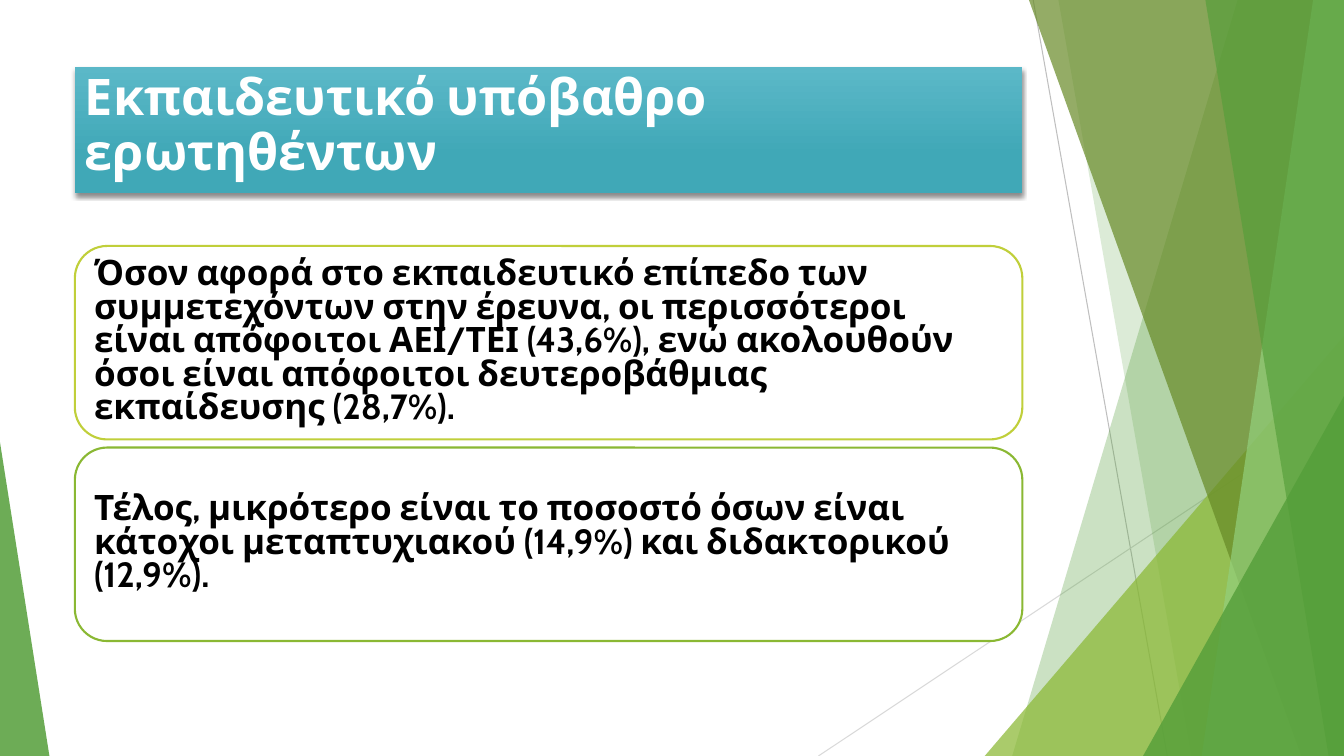
from lxml import etree
from pptx import Presentation
from pptx.dml.color import RGBColor
from pptx.enum.shapes import MSO_CONNECTOR, MSO_SHAPE
from pptx.enum.text import MSO_ANCHOR, MSO_AUTO_SIZE, PP_ALIGN
from pptx.oxml import parse_xml
from pptx.oxml.ns import nsdecls, qn
from pptx.util import Pt

STRAIGHT = MSO_CONNECTOR.STRAIGHT
TRIANGLE = MSO_SHAPE.ISOSCELES_TRIANGLE
ROUNDED = MSO_SHAPE.ROUNDED_RECTANGLE
TOP, MIDDLE = MSO_ANCHOR.TOP, MSO_ANCHOR.MIDDLE
NO_FIT = MSO_AUTO_SIZE.NONE
LEFT = PP_ALIGN.LEFT

W, H = 960, 540
TITLE_ONLY = 5
CONTENT_X, CONTENT_W = 53.5, 676.8
BOX_Y, BOX_H, BOX_STEP = 175.7, 138.2, 144
GREEN, LIME = "549E39", "8AB833"

TITLE = "Εκπαιδευτικό υπόβαθρο ερωτηθέντων"
BOXES = [
    ("Όσον αφορά στο εκπαιδευτικό επίπεδο των συμμετεχόντων στην έρευνα, "
     "οι περισσότεροι είναι απόφοιτοι ΑΕΙ/ΤΕΙ (43,6%), ενώ ακολουθούν όσοι "
     "είναι απόφοιτοι δευτεροβάθμιας εκπαίδευσης (28,7%).", "C0CF3A"),
    ("Τέλος, μικρότερο είναι το ποσοστό όσων είναι κάτοχοι μεταπτυχιακού "
     "(14,9%) και διδακτορικού (12,9%).", LIME),
]


def rgb(color):
    return RGBColor.from_string(color)


def set_all(obj, values):
    for name, value in values.items():
        setattr(obj, name, value)


def add_line(slide, x1, y1, x2, y2, color):
    c = slide.shapes.add_connector(STRAIGHT, Pt(x1), Pt(y1), Pt(x2), Pt(y2))
    c.line.color.rgb = rgb(color)
    c.line.width = Pt(0.75)
    etree.SubElement(c._element.spPr, qn("a:effectLst"))


def paint(sp, color, opacity):
    """Give a facet a see-through fill and no outline."""
    sp.shadow.inherit = False
    sp.fill.solid()
    sp.fill.fore_color.rgb = rgb(color)
    sp.line.fill.background()
    clr = sp._element.spPr.find(qn("a:solidFill"))[0]
    etree.SubElement(clr, qn("a:alpha")).set("val", str(opacity * 1000))


def add_band(slide, top_x, bottom_x, color, opacity):
    """Add a facet that runs from a slanted left edge to the slide's right edge."""
    builder = slide.shapes.build_freeform(Pt(top_x), 0)
    builder.add_line_segments(
        [(Pt(x), Pt(y)) for x, y in ((W, 0), (W, H), (bottom_x, H))])
    paint(builder.convert_to_shape(), color, opacity)


def add_triangle(slide, x, y, w, apex, color, opacity):
    """Add a right-angled facet that stands on the bottom edge."""
    sp = slide.shapes.add_shape(TRIANGLE, Pt(x), Pt(y), Pt(w), Pt(H - y))
    sp.adjustments[0] = apex
    paint(sp, color, opacity)


def write(sp, text, size, color, anchor, spacing, margins):
    tf = sp.text_frame
    set_all(tf, {"word_wrap": True, "auto_size": NO_FIT,
                 "vertical_anchor": anchor, **margins})
    p = tf.paragraphs[0]
    set_all(p, {"alignment": LEFT, "line_spacing": spacing})
    r = p.add_run()
    r.text = text
    set_all(r.font, {"name": "Cabin", "size": Pt(size), "bold": True})
    r.font.color.rgb = rgb(color)


def format_title(slide):
    sp = slide.shapes.title
    set_all(sp, {"left": Pt(CONTENT_X), "top": Pt(48),
                 "width": Pt(CONTENT_W), "height": Pt(90)})
    sp.fill.gradient()
    sp.fill.gradient_angle = 270
    stops = zip(sp.fill.gradient_stops, ("5BB8C8", "40A8B7"), (0, 0.7))
    for stop, color, position in stops:
        stop.color.rgb = rgb(color)
        stop.position = position
    sp._element.spPr.append(parse_xml(
        f'<a:effectLst {nsdecls("a")}><a:outerShdw blurRad="38100" dist="25400" '
        'dir="5400000" rotWithShape="0"><a:srgbClr val="000000">'
        '<a:alpha val="45000"/></a:srgbClr></a:outerShdw></a:effectLst>'))
    write(sp, TITLE, 36, "FFFFFF", TOP, 0.9,
          {"margin_left": Pt(7.2), "margin_right": Pt(7.2),
           "margin_top": Pt(3.6), "margin_bottom": Pt(3.6)})


def add_box(slide, y, text, color):
    sp = slide.shapes.add_shape(
        ROUNDED, Pt(CONTENT_X), Pt(y), Pt(CONTENT_W), Pt(BOX_H))
    sp.shadow.inherit = False
    sp.fill.solid()
    sp.fill.fore_color.rgb = rgb("FFFFFF")
    sp.line.color.rgb = rgb(color)
    sp.line.width = Pt(1.5)
    sides = ("left", "right", "top", "bottom")
    write(sp, text, 25, "000000", MIDDLE, 0.8,
          {f"margin_{side}": Pt(7.2) for side in sides})


def add_facets(slide):
    add_line(slide, 738, 0, 833.8, H, "BFBFBF")
    add_line(slide, W, 290, 584.6, H, "D9D9D9")
    add_band(slide, 884, 723, GREEN, 30)
    add_band(slide, 756, 851, GREEN, 20)
    add_triangle(slide, 703.4, 240, W - 703.4, 1, LIME, 72)
    add_band(slide, 735, 929.5, "678A26", 70)
    add_band(slide, 938, 858.4, "93D07D", 70)
    add_band(slide, 861, 949, GREEN, 65)
    add_triangle(slide, 816.5, 283, W - 816.5, 1, GREEN, 80)
    add_triangle(slide, 0, 316, 35.3, 0, GREEN, 85)


def main():
    prs = Presentation()
    prs.slide_width, prs.slide_height = Pt(W), Pt(H)
    slide = prs.slides.add_slide(prs.slide_layouts[TITLE_ONLY])
    add_facets(slide)
    format_title(slide)
    for i, (text, color) in enumerate(BOXES):
        add_box(slide, BOX_Y + i * BOX_STEP, text, color)
    prs.save("out.pptx")


if __name__ == "__main__":
    main()
